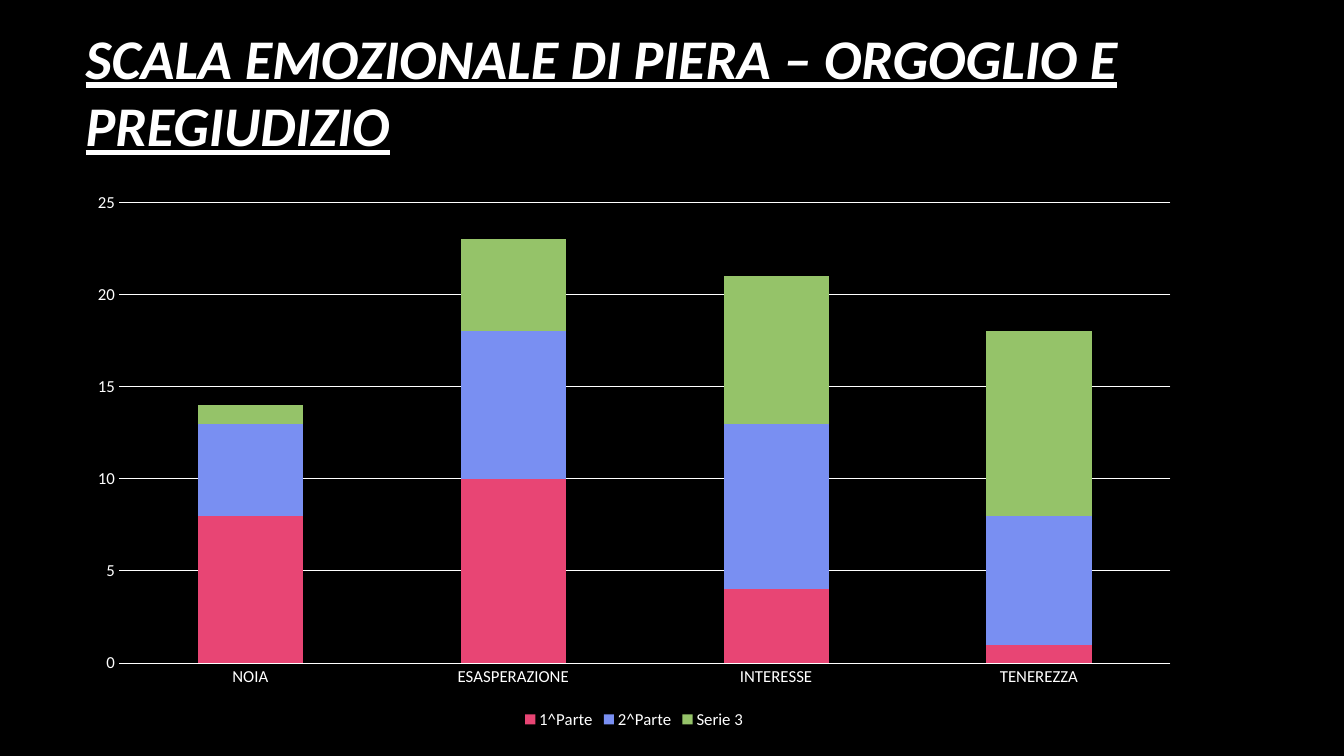
from dataclasses import dataclass

from pptx import Presentation
from pptx.chart.data import CategoryChartData
from pptx.dml.color import RGBColor
from pptx.enum.chart import XL_CHART_TYPE, XL_LEGEND_POSITION, XL_TICK_MARK
from pptx.enum.text import MSO_ANCHOR, MSO_AUTO_SIZE, PP_ALIGN
from pptx.util import Inches, Pt


@dataclass(frozen=True)
class Theme:
    font: str = "Calibri"
    back: str = "000000"
    ink: str = "FFFFFF"
    bars: tuple = ("E84574", "798FF2", "95C369")
    title: int = 40
    label: int = 12
    grid: float = 0.75


THEME = Theme()
WIDE, HIGH = 13.33, 7.5
LEFT, SPAN = 0.75, 11.08
SPLIT = 0.24 * HIGH
DEPTH = 0.73 * HIGH

MOODS = ("NOIA", "ESASPERAZIONE", "INTERESSE", "TENEREZZA")
PARTS = {
    "1^Parte": (8, 10, 4, 1),
    "2^Parte": (5, 8, 9, 7),
    "Serie 3": (1, 5, 8, 10),
}


def paint(fill, color):
    fill.solid()
    fill.fore_color.rgb = RGBColor.from_string(color)


def style(font, size, **marks):
    """Apply the theme's face and ink, plus marks such as bold."""
    font.name = THEME.font
    font.size = Pt(size)
    font.color.rgb = RGBColor.from_string(THEME.ink)
    for name, value in marks.items():
        setattr(font, name, value)


def place(shape, left, top, width, height):
    shape.left, shape.top = Inches(left), Inches(top)
    shape.width, shape.height = Inches(width), Inches(height)


def write(shape, text, size, align=PP_ALIGN.LEFT, **marks):
    frame = shape.text_frame
    frame.word_wrap = True
    frame.auto_size = MSO_AUTO_SIZE.NONE
    frame.vertical_anchor = MSO_ANCHOR.MIDDLE
    line = frame.paragraphs[0]
    line.alignment = align
    run = line.add_run()
    run.text = text
    style(run.font, size, **marks)


def trim(axis):
    """Leave only the labels of an axis."""
    axis.major_tick_mark = axis.minor_tick_mark = XL_TICK_MARK.NONE
    axis.format.line.fill.background()
    style(axis.tick_labels.font, THEME.label)


def stack(slide, cats, rows, box):
    data = CategoryChartData()
    data.categories = cats
    for name, values in rows.items():
        data.add_series(name, values)
    kind = XL_CHART_TYPE.COLUMN_STACKED
    chart = slide.shapes.add_chart(kind, *map(Inches, box), data).chart
    style(chart.font, THEME.label)
    chart.has_title = False

    plot = chart.plots[0]
    plot.gap_width, plot.overlap = 150, 100
    plot.vary_by_categories = False
    for part, color in zip(plot.series, THEME.bars):
        paint(part.format.fill, color)

    trim(chart.category_axis)
    trim(chart.value_axis)
    chart.value_axis.has_major_gridlines = True
    grid = chart.value_axis.major_gridlines.format.line
    paint(grid.fill, THEME.ink)
    grid.width = Pt(THEME.grid)

    chart.has_legend = True
    chart.legend.position = XL_LEGEND_POSITION.BOTTOM
    chart.legend.include_in_layout = False
    style(chart.legend.font, THEME.label)


def main():
    deck = Presentation()
    deck.slide_width, deck.slide_height = Inches(WIDE), Inches(HIGH)
    slide = deck.slides.add_slide(deck.slide_layouts.get_by_name("Title Only"))
    paint(slide.background.fill, THEME.back)

    title = slide.shapes.title
    place(title, LEFT, 0, SPAN, SPLIT)
    write(title, "SCALA EMOZIONALE DI PIERA – ORGOGLIO E PREGIUDIZIO",
          THEME.title, bold=True, italic=True, underline=True)
    stack(slide, MOODS, PARTS, (LEFT, SPLIT, SPAN, DEPTH))
    deck.save("out.pptx")


if __name__ == "__main__":
    main()
